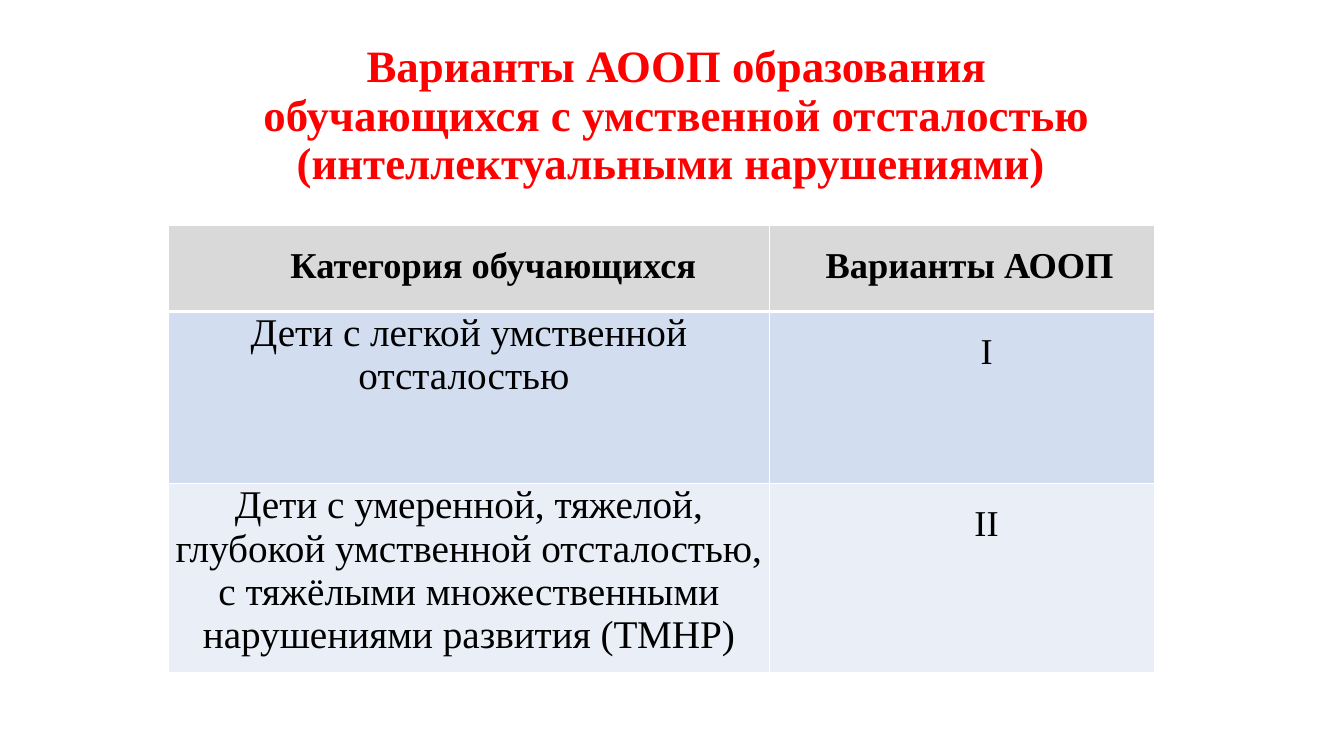
from lxml import etree
from pptx import Presentation
from pptx.dml.color import RGBColor
from pptx.enum.text import MSO_ANCHOR, PP_ALIGN
from pptx.oxml.ns import qn
from pptx.util import Inches, Pt

LEFT, CENTER = PP_ALIGN.LEFT, PP_ALIGN.CENTER
MIDDLE = MSO_ANCHOR.MIDDLE
FONT = "Times New Roman"
COLORS = {
    "title": "FF0000",
    "text": "000000",
    "border": "FFFFFF",
    "header": "D9D9D9",
    "mild": "D2DEEF",
    "severe": "EAEFF7",
}

TITLE = ("Варианты АООП образования обучающихся с умственной отсталостью "
         "(интеллектуальными нарушениями) ")
COLUMN_WIDTHS = (5.96, 3.82)
ROW_HEIGHTS = (0.85, 1.71, 1.71)
ROW_FILLS = ("header", "mild", "severe")
ROWS = (
    ("Категория обучающихся", "Варианты АООП"),
    ("Дети с легкой умственной отсталостью ", "I"),
    ("Дети с умеренной, тяжелой, глубокой умственной отсталостью, "
     "с тяжёлыми множественными нарушениями развития (ТМНР)", "II"),
)


def rgb(name):
    return RGBColor.from_string(COLORS[name])


def write(tf, text, size, color, bold, align, spacing):
    """Fill a text frame with one formatted paragraph and return it."""
    tf.text = text
    p = tf.paragraphs[0]
    p.alignment = align
    p.line_spacing = spacing
    font = p.runs[0].font
    font.name, font.size, font.bold = FONT, Pt(size), bold
    font.color.rgb = rgb(color)
    return p


def add_title(slide, left, top, width, height):
    box = slide.shapes.add_textbox(
        Inches(left), Inches(top), Inches(width), Inches(height))
    tf = box.text_frame
    tf.word_wrap = True
    tf.vertical_anchor = MIDDLE
    write(tf, TITLE, 32, "title", True, CENTER, 0.9)


def set_borders(cell, bottom_width):
    tc_pr = cell._tc.get_or_add_tcPr()
    for side, width in (("L", 1), ("R", 1), ("T", 1), ("B", bottom_width)):
        line = etree.SubElement(tc_pr, qn(f"a:ln{side}"), w=str(Pt(width)))
        fill = etree.SubElement(line, qn("a:solidFill"))
        etree.SubElement(fill, qn("a:srgbClr"), val=COLORS["border"])


def format_cell(cell, text, row, col):
    is_header = row == 0
    is_category = col == 0 and not is_header
    cell.margin_left = cell.margin_right = Inches(0.07)
    cell.margin_top = cell.margin_bottom = 0
    set_borders(cell, 3 if is_header else 1)
    cell.fill.solid()
    cell.fill.fore_color.rgb = rgb(ROW_FILLS[row])
    p = write(cell.text_frame, text, 28 if is_category else 26, "text",
              is_header, LEFT if is_header and col == 1 else CENTER,
              1.0 if is_category else 1.5)
    if not is_category:
        p._p.get_or_add_pPr().set("indent", str(Inches(0.49)))


def add_variants_table(slide, left, top):
    table = slide.shapes.add_table(
        len(ROWS), len(COLUMN_WIDTHS), Inches(left), Inches(top),
        Inches(sum(COLUMN_WIDTHS)), Inches(sum(ROW_HEIGHTS))).table
    for column, width in zip(table.columns, COLUMN_WIDTHS):
        column.width = Inches(width)
    for row, height in zip(table.rows, ROW_HEIGHTS):
        row.height = Inches(height)
    for i, texts in enumerate(ROWS):
        for j, text in enumerate(texts):
            format_cell(table.cell(i, j), text, i, j)


def main():
    prs = Presentation()
    prs.slide_width, prs.slide_height = Inches(13.33), Inches(7.5)
    slide = prs.slides.add_slide(prs.slide_layouts[6])
    add_title(slide, 2.18, 0.31, 9.06, 1.7)
    add_variants_table(slide, 1.67, 2.24)
    prs.save("out.pptx")


if __name__ == "__main__":
    main()
